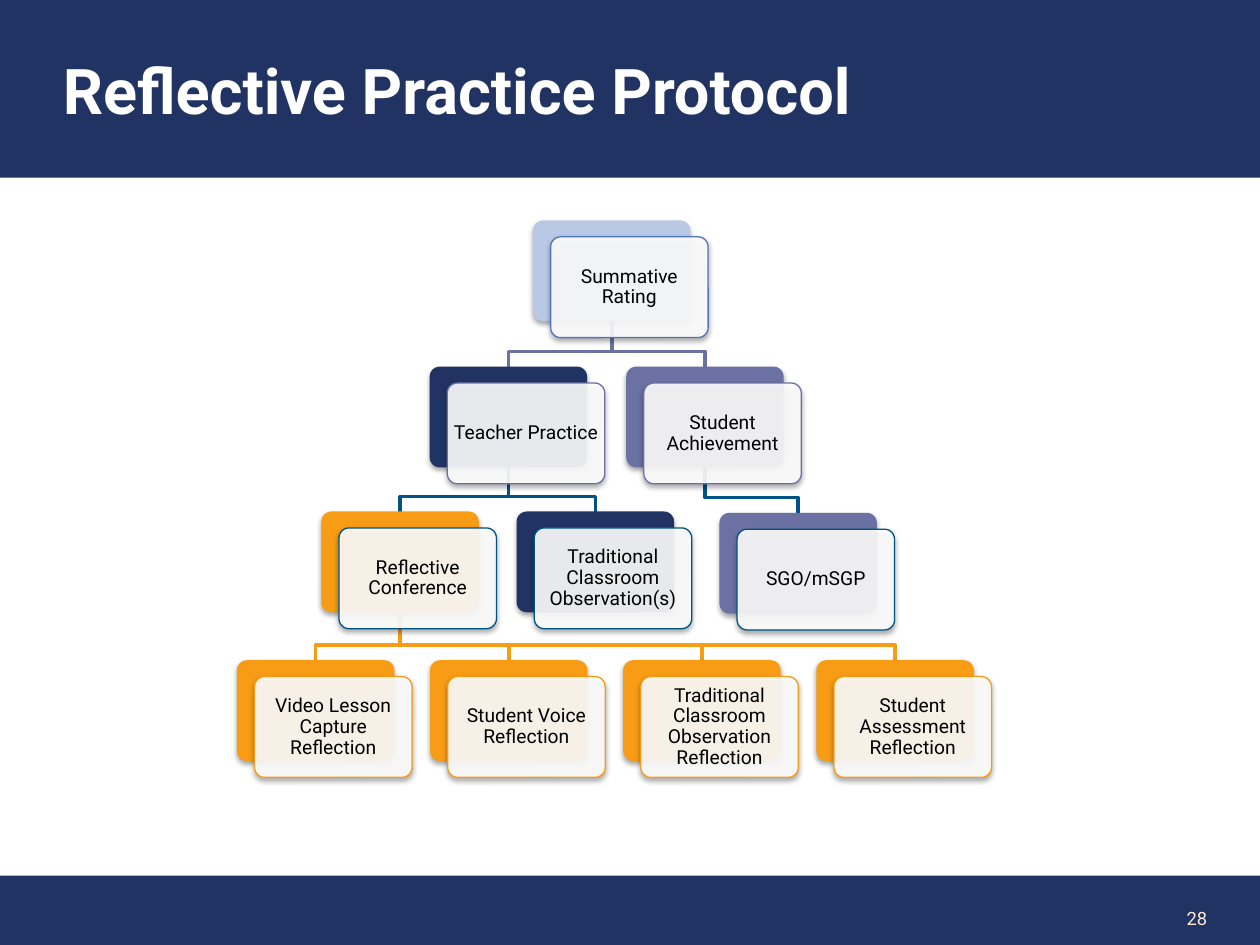
"""Build the Reflective Practice Protocol hierarchy slide."""
from lxml.etree import SubElement
from pptx import Presentation
from pptx.dml.color import RGBColor
from pptx.enum.shapes import MSO_SHAPE
from pptx.enum.text import MSO_ANCHOR, PP_ALIGN
from pptx.oxml.ns import qn
from pptx.util import Inches, Pt

COLORS = {
    "navy": "213363", "cream": "FEEBD0", "white": "FFFFFF", "black": "000000",
    "pale": "B9C8E4", "blue": "5075BB", "purple": "6B72A3", "teal": "005485",
    "orange": "F89C15",
}
CARD_W, CARD_H = 1.25, 0.8
OFFSET_X, OFFSET_Y = 0.14, 0.13
BEND = 0.12

CARDS = {
    "Summative Rating": (4.23, 1.75, "pale", "blue"),
    "Teacher Practice": (3.41, 2.91, "navy", "purple"),
    "Student Achievement": (4.97, 2.91, "purple", "purple"),
    "Reflective Conference": (2.55, 4.06, "orange", "teal"),
    "Traditional Classroom Observation(s)": (4.1, 4.06, "navy", "teal"),
    "SGO/mSGP": (5.71, 4.07, "purple", "teal"),
}
REFLECTIONS = [
    "Video Lesson Capture Reflection", "Student Voice Reflection",
    "Traditional Classroom Observation Reflection", "Student Assessment Reflection",
]
for column, label in enumerate(REFLECTIONS):
    CARDS[label] = (1.88 + 1.533 * column, 5.24, "orange", "orange")

BRANCHES = [
    ("Student Achievement", "teal", ["SGO/mSGP"]),
    ("Summative Rating", "purple", ["Student Achievement", "Teacher Practice"]),
    ("Reflective Conference", "orange", REFLECTIONS),
    ("Teacher Practice", "teal",
     ["Reflective Conference", "Traditional Classroom Observation(s)"]),
]


def add_block(kind, left, top, width, height, color):
    block = slide.shapes.add_shape(
        kind, Inches(left), Inches(top), Inches(width), Inches(height))
    block.shadow.inherit = False
    block.fill.solid()
    block.fill.fore_color.rgb = RGBColor.from_string(COLORS[color])
    block.line.fill.background()
    if kind == MSO_SHAPE.ROUNDED_RECTANGLE:
        block.adjustments[0] = 0.1
        effects = block.element.spPr.find(qn("a:effectLst"))
        shadow = SubElement(effects, qn("a:outerShdw"), blurRad=str(Pt(3.1)),
                            dist=str(Pt(1.8)), dir="5400000", rotWithShape="0")
        tint = SubElement(shadow, qn("a:srgbClr"), val=COLORS["black"])
        SubElement(tint, qn("a:alpha"), val="35000")
    return block


def write(holder, text, size, color, align, bold=False):
    frame = holder.text_frame
    frame.word_wrap = True
    frame.vertical_anchor = MSO_ANCHOR.MIDDLE
    paragraph = frame.paragraphs[0]
    paragraph.text = text
    paragraph.alignment = align
    paragraph.font.name = "Roboto"
    paragraph.font.size = Pt(size)
    paragraph.font.bold = bold
    paragraph.font.color.rgb = RGBColor.from_string(COLORS[color])
    return frame


presentation = Presentation()
presentation.slide_width, presentation.slide_height = Inches(10), Inches(7.5)
slide = presentation.slides.add_slide(presentation.slide_layouts[6])

add_block(MSO_SHAPE.RECTANGLE, 0, 6.95, 10.02, 0.59, "navy")
page_number = slide.shapes.add_textbox(Inches(8.22), Inches(7.09), Inches(1.46), Inches(0.4))
write(page_number, "28", 10.5, "cream", PP_ALIGN.RIGHT)

header = add_block(MSO_SHAPE.RECTANGLE, 0, 0, 10, 1.41, "navy")
title = write(header, "Reflective Practice Protocol", 36, "white", PP_ALIGN.LEFT, True)
title.margin_left = Inches(0.5)

for parent, color, children in BRANCHES:
    parent_left, parent_top, *_ = CARDS[parent]
    start_x, start_y = parent_left + CARD_W / 2, parent_top + CARD_H
    for child in children:
        child_left, child_top, *_ = CARDS[child]
        end_x, bend_y = child_left + CARD_W / 2, child_top - BEND
        route = slide.shapes.build_freeform(Inches(start_x), Inches(start_y))
        route.add_line_segments(
            [(Inches(x), Inches(y)) for x, y in
             [(start_x, bend_y), (end_x, bend_y), (end_x, child_top)]], close=False)
        branch = route.convert_to_shape()
        branch.shadow.inherit = False
        branch.fill.background()
        branch.line.color.rgb = RGBColor.from_string(COLORS[color])
        branch.line.width = Pt(2)

for label, (left, top, back_color, border) in CARDS.items():
    add_block(MSO_SHAPE.ROUNDED_RECTANGLE, left, top, CARD_W, CARD_H, back_color)
    card = add_block(MSO_SHAPE.ROUNDED_RECTANGLE, left + OFFSET_X, top + OFFSET_Y,
                     CARD_W, CARD_H, "white")
    face = card.element.spPr.find(qn("a:solidFill")).find(qn("a:srgbClr"))
    SubElement(face, qn("a:alpha"), val="90000")
    card.line.color.rgb = RGBColor.from_string(COLORS[border])
    card.line.width = Pt(0.75)
    caption = write(card, label, 11, "black", PP_ALIGN.CENTER)
    caption.paragraphs[0].line_spacing = 0.9
    caption.margin_left = caption.margin_right = Inches(0.02)
    caption.margin_top = caption.margin_bottom = Inches(0.02)

presentation.save("out.pptx")
